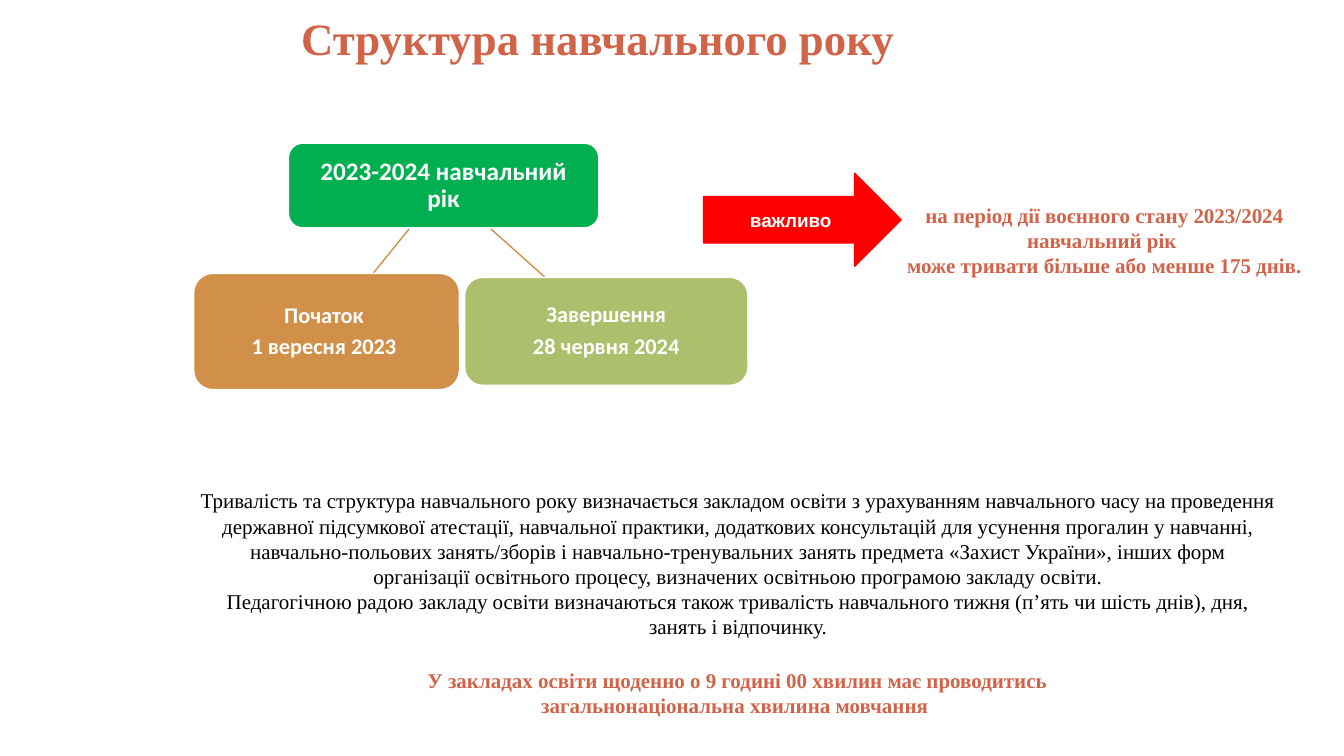
import pptx
import pptx.dml.color
import pptx.enum.shapes
import pptx.enum.text
import pptx.oxml.ns
import pptx.util
from lxml import etree

Cm, Pt = pptx.util.Cm, pptx.util.Pt
ALIGN = pptx.enum.text.PP_ALIGN
ANCHOR = pptx.enum.text.MSO_ANCHOR
SHAPE = pptx.enum.shapes.MSO_SHAPE
STRAIGHT = pptx.enum.shapes.MSO_CONNECTOR.STRAIGHT

COLORS = {
    "accent": "D16349",
    "green": "00B050",
    "amber": "D19049",
    "olive": "ADBF6C",
    "red": "FF0000",
    "white": "FFFFFF",
    "black": "000000",
}


def tint(name):
    return pptx.dml.color.RGBColor.from_string(COLORS[name])


def write(frame, text, size=15, font="Times New Roman", color="accent",
          bold=True, align=ALIGN.CENTER, line=None, after=None):
    """Fill a text frame with one paragraph per line of text."""
    for i, words in enumerate(text.split("\n")):
        para = frame.add_paragraph() if i else frame.paragraphs[0]
        para.alignment = align
        para.line_spacing = line
        para.space_after = after
        run = para.add_run()
        run.text = words
        run.font.size = Pt(size)
        run.font.name = font
        run.font.bold = bold
        run.font.color.rgb = tint(color)


class Deck:
    """Holds the style and the current slide."""

    def __init__(self, width, height):
        self.show = pptx.Presentation()
        self.show.slide_width = Cm(width)
        self.show.slide_height = Cm(height)
        self.slide = self.show.slides.add_slide(self.show.slide_layouts[6])
        self.stroke = Pt(1)

    def text(self, box, words, wrap=True, **style):
        frame = self.slide.shapes.add_textbox(*map(Cm, box)).text_frame
        frame.word_wrap = wrap
        write(frame, words, **style)

    def shape(self, kind, box, words, fill, edge, inset=0.25, **style):
        shape = self.slide.shapes.add_shape(kind, *map(Cm, box))
        shape.shadow.inherit = False
        shape.fill.solid()
        shape.fill.fore_color.rgb = tint(fill)
        shape.line.color.rgb = tint(edge)
        shape.line.width = self.stroke
        frame = shape.text_frame
        frame.word_wrap = True
        frame.vertical_anchor = ANCHOR.MIDDLE
        frame.margin_left = frame.margin_right = Cm(inset)
        write(frame, words, color="white", **style)

    def node(self, box, words, fill, size):
        self.shape(SHAPE.ROUNDED_RECTANGLE, box, words, fill, "white",
                   size=size, font="Calibri", line=0.9, after=Pt(5))

    def link(self, *ends):
        line = self.slide.shapes.add_connector(STRAIGHT, *map(Cm, ends))
        line.line.color.rgb = tint("amber")
        line.line.width = self.stroke
        props = line._element.spPr
        etree.SubElement(props, pptx.oxml.ns.qn("a:effectLst"))


def main():
    deck = Deck(33.87, 19.05)
    deck.text((7.34, 0.15, 15.6, 1.63), "Структура навчального року",
              wrap=False, size=32, align=ALIGN.LEFT)

    deck.node((7.27, 3.61, 7.82, 2.13), "2023-2024 навчальний рік",
              "green", 18)
    deck.link(12.37, 5.77, 13.74, 6.99)
    deck.node((11.71, 6.99, 7.14, 2.72), "Завершення\n28 червня 2024",
              "olive", 16)
    deck.link(10.31, 5.77, 9.4, 6.89)
    deck.node((4.88, 6.89, 6.7, 2.93), "Початок \n1 вересня 2023 ",
              "amber", 16)

    deck.shape(SHAPE.RIGHT_ARROW, (17.73, 4.37, 4.98, 2.34), "важливо",
               "red", "red", size=13.5, font="Arial")
    deck.text((22.3, 4.98, 11.07, 2.2),
              "на період дії воєнного стану 2023/2024 навчальний рік \n"
              "може тривати більше або менше 175 днів.")

    deck.text((4.8, 12.17, 27.6, 4.11),
              "Тривалість та структура навчального року визначається закладом "
              "освіти з урахуванням навчального часу на проведення державної "
              "підсумкової атестації, навчальної практики, додаткових "
              "консультацій для усунення прогалин у навчанні, "
              "навчально-польових занять/зборів і навчально-тренувальних "
              "занять предмета «Захист України», інших форм організації "
              "освітнього процесу, визначених освітньою програмою закладу "
              "освіти.\n"
              "Педагогічною радою закладу освіти визначаються також тривалість "
              "навчального тижня (п’ять чи шість днів), дня, занять і "
              "відпочинку.",
              color="black", bold=False)
    deck.text((7.65, 16.69, 21.87, 1.55),
              "У закладах освіти щоденно о 9 годині 00 хвилин має проводитись\n"
              "загальнонаціональна хвилина мовчання ")
    deck.show.save("out.pptx")


if __name__ == "__main__":
    main()
